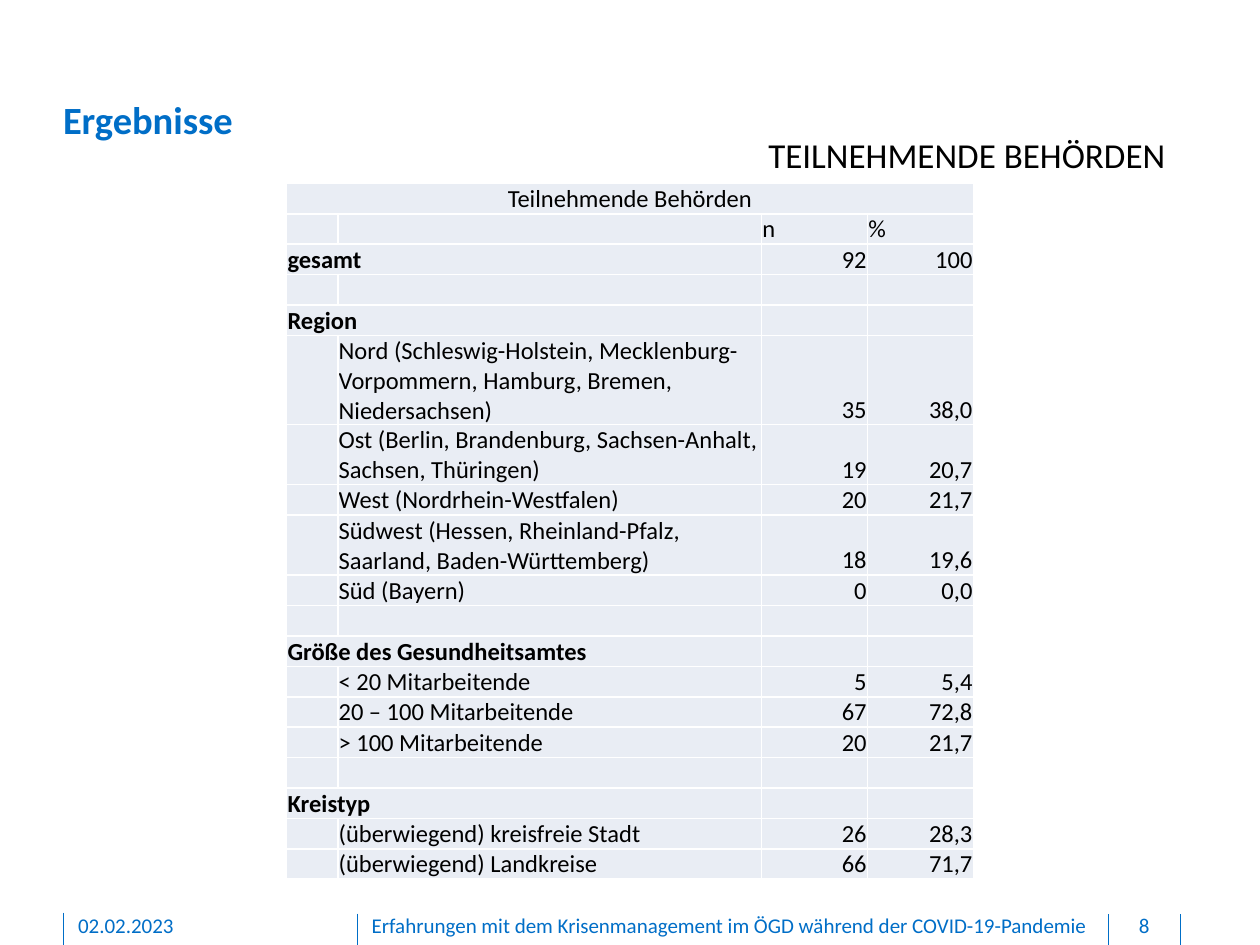
from pptx import Presentation
from pptx.dml.color import RGBColor
from pptx.enum.shapes import MSO_CONNECTOR
from pptx.enum.text import MSO_ANCHOR, PP_ALIGN
from pptx.oxml.ns import qn
from pptx.util import Pt
from lxml import etree

BLUE = RGBColor(0x00, 0x6E, 0xC7)
BLACK = RGBColor(0x00, 0x00, 0x00)
CELL_FILL = RGBColor(0xE9, 0xED, 0xF4)
LEFT, CENTER, RIGHT = PP_ALIGN.LEFT, PP_ALIGN.CENTER, PP_ALIGN.RIGHT
TOP, BOTTOM = MSO_ANCHOR.TOP, MSO_ANCHOR.BOTTOM
STRAIGHT = MSO_CONNECTOR.STRAIGHT
FONT = "Calibri"


def write_text(text_frame, text, size=12, color=BLUE, bold=False, align=LEFT):
    paragraph = text_frame.paragraphs[0]
    paragraph.alignment = align
    run = paragraph.add_run()
    run.text = text
    run.font.name = FONT
    run.font.size = Pt(size)
    run.font.bold = bold
    run.font.color.rgb = color


def set_margins(text_frame, bottom=0):
    text_frame.word_wrap = True
    text_frame.vertical_anchor = TOP
    text_frame.margin_left = text_frame.margin_right = text_frame.margin_top = 0
    text_frame.margin_bottom = Pt(bottom)


presentation = Presentation()
presentation.slide_width, presentation.slide_height = Pt(720), Pt(540)
slide = presentation.slides.add_slide(presentation.slide_layouts[5])

# Footer dividers
for x, top in ((36, 521.5), (204.5, 522), (633.5, 522.5), (674.5, 522.5)):
    divider = slide.shapes.add_connector(STRAIGHT, Pt(x), Pt(top), Pt(x), Pt(540))
    divider.line.color.rgb = BLUE
    divider.line.width = Pt(0.5)
    etree.SubElement(divider._element.spPr, qn("a:effectLst"))

# Footer texts
for text, left, width, align in (
    ("02.02.2023", 44.6, 146, LEFT),
    ("Erfahrungen mit dem Krisenmanagement im ÖGD während der COVID-19-Pandemie",
     212.4, 414, LEFT),
    ("8", 634.3, 39, CENTER),
):
    footer = slide.shapes.add_textbox(Pt(left), Pt(521.3), Pt(width), Pt(15))
    set_margins(footer.text_frame, bottom=3.6)
    write_text(footer.text_frame, text, align=align)

# Title and subtitle
title = slide.shapes.title
title.left, title.top, title.width, title.height = Pt(36), Pt(54.7), Pt(637), Pt(26.7)
set_margins(title.text_frame)
write_text(title.text_frame, "Ergebnisse", size=22, bold=True)

subtitle = slide.shapes.add_textbox(Pt(273.6), Pt(72.7), Pt(399.6), Pt(31.5))
subtitle.text_frame.word_wrap = True
write_text(subtitle.text_frame, "TEILNEHMENDE BEHÖRDEN", size=20, color=BLACK, align=RIGHT)

# Table content: heading, label, n, %
ROWS = [
    ("Teilnehmende Behörden", "", "", ""),
    ("", "", "n", "%"),
    ("gesamt", "", "92", "100"),
    ("", "", "", ""),
    ("Region", "", "", ""),
    ("", "Nord (Schleswig-Holstein, Mecklenburg-Vorpommern, Hamburg, Bremen, Niedersachsen)",
     "35", "38,0"),
    ("", "Ost (Berlin, Brandenburg, Sachsen-Anhalt, Sachsen, Thüringen)", "19", "20,7"),
    ("", "West (Nordrhein-Westfalen)", "20", "21,7"),
    ("", "Südwest (Hessen, Rheinland-Pfalz, Saarland, Baden-Württemberg)", "18", "19,6"),
    ("", "Süd (Bayern)", "0", "0,0"),
    ("", "", "", ""),
    ("Größe des Gesundheitsamtes", "", "", ""),
    ("", "< 20 Mitarbeitende", "5", "5,4"),
    ("", "20 – 100 Mitarbeitende", "67", "72,8"),
    ("", "> 100 Mitarbeitende", "20", "21,7"),
    ("", "", "", ""),
    ("Kreistyp", "", "", ""),
    ("", "(überwiegend) kreisfreie Stadt", "26", "28,3"),
    ("", "(überwiegend) Landkreise", "66", "71,7"),
]
COLUMN_WIDTHS = (29.2, 242.2, 60.5, 60.5)
ROW_HEIGHT = 17.4
TALL_ROWS = {5: 51, 6: 34.3, 8: 34.3}

# Table
table = slide.shapes.add_table(
    len(ROWS), len(COLUMN_WIDTHS), Pt(163.8), Pt(104.8), Pt(392.4), Pt(398)
).table
table.first_row = table.horz_banding = False
for column, width in zip(table.columns, COLUMN_WIDTHS):
    column.width = Pt(width)

for row_index, values in enumerate(ROWS):
    table.rows[row_index].height = Pt(TALL_ROWS.get(row_index, ROW_HEIGHT))
    for column_index, text in enumerate(values):
        cell = table.cell(row_index, column_index)
        cell.fill.solid()
        cell.fill.fore_color.rgb = CELL_FILL
        cell.vertical_anchor = BOTTOM
        cell.margin_left = cell.margin_right = cell.margin_top = Pt(0.5)
        cell.margin_bottom = 0
        if text:
            align = LEFT
            if row_index == 0:
                align = CENTER
            elif row_index > 1 and column_index > 1:
                align = RIGHT
            write_text(cell.text_frame, text, size=14, color=BLACK, align=align,
                       bold=row_index > 0 and column_index == 0)
        else:
            # Keep empty cells as low as a line of text
            end = cell.text_frame.paragraphs[0]._p.get_or_add_endParaRPr()
            end.set("sz", "1400")
            etree.SubElement(end, qn("a:latin")).set("typeface", FONT)
    if values[0]:
        last_column = 3 if row_index == 0 else 1
        table.cell(row_index, 0).merge(table.cell(row_index, last_column))

presentation.save("out.pptx")
